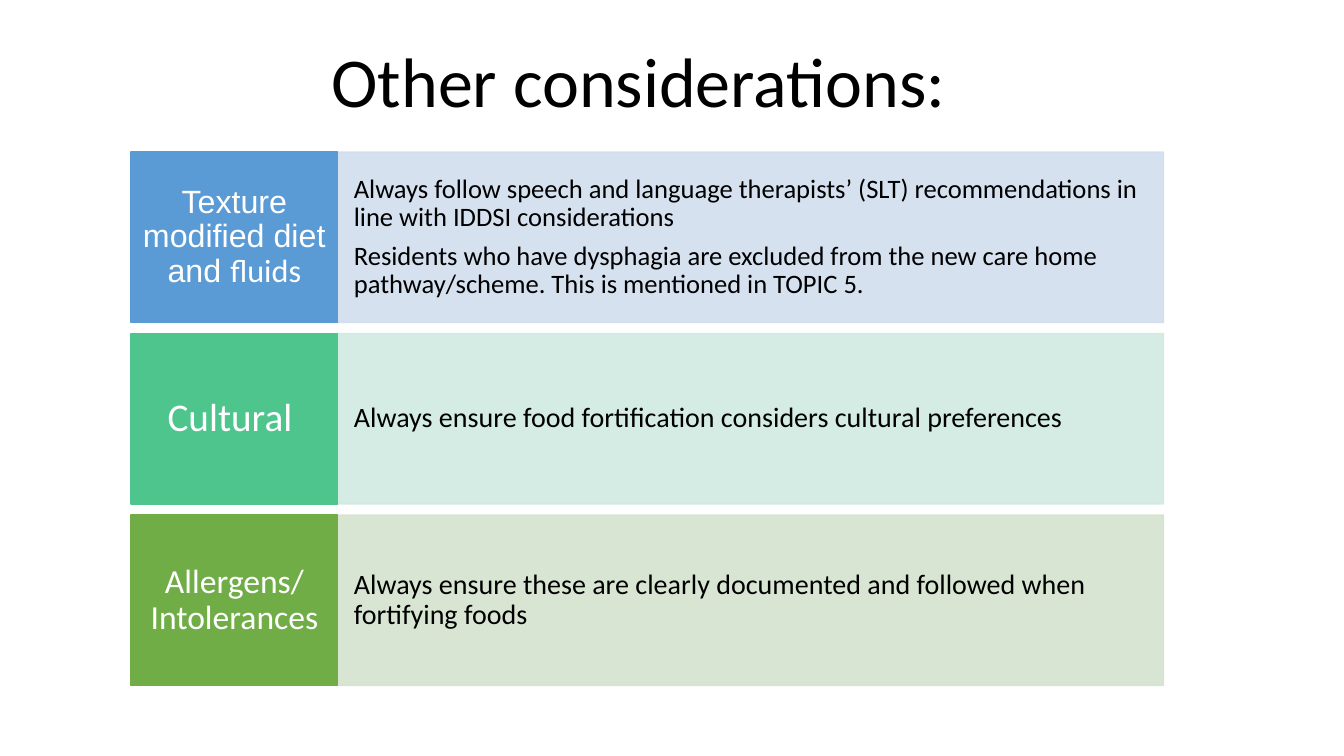
from lxml.etree import SubElement
from pptx import Presentation
from pptx.dml.color import RGBColor
from pptx.enum.shapes import MSO_SHAPE
from pptx.enum.text import MSO_ANCHOR, PP_ALIGN
from pptx.oxml.ns import qn
from pptx.util import Inches, Pt

LEFT, TOP = 1.3, 1.51
LABEL_W, BODY_W = 2.05, 8.19
ROW_H, STEP = 1.69, 1.8

# Label colour, label size, label runs, body colour, body size, body lines
ROWS = [
    ("5B9BD5", 23,
     [("Texture modified diet and ", "Arial"), ("fluids", "Calibri")],
     "D2DEEF", 19,
     ["Always follow speech and language therapists’ (SLT) "
      "recommendations in line with IDDSI considerations",
      "Residents who have dysphagia are excluded from the new care home "
      "pathway/scheme. This is mentioned in TOPIC 5."]),
    ("4DC58D", 28, [("Cultural ", "Calibri")],
     "D0EAE1", 20,
     ["Always ensure food fortification considers cultural preferences"]),
    ("70AD47", 24, [("Allergens/ Intolerances", "Calibri")],
     "D5E3CF", 20,
     ["Always ensure these are clearly documented and followed when "
      "fortifying foods"]),
]


def paint(fill, color, alpha=100):
    fill.solid()
    fill.fore_color.rgb = RGBColor.from_string(color)
    if alpha < 100:
        for tone in fill._xPr.iter(qn("a:srgbClr")):
            SubElement(tone, qn("a:alpha")).set("val", str(alpha * 1000))


def write(frame, paras, size, color, align, after=0):
    """Fill a frame; each paragraph is a list of (text, font) runs."""
    frame.word_wrap = True
    for i, runs in enumerate(paras):
        para = frame.paragraphs[0] if i == 0 else frame.add_paragraph()
        para.alignment = align
        para.line_spacing = 0.9
        para.space_after = Pt(after)
        for text, name in runs:
            run = para.add_run()
            run.text = text
            run.font.name = name
            run.font.size = Pt(size)
            paint(run.font.fill, color)


def add_title(slide, text):
    box = slide.shapes.add_textbox(
        Inches(LEFT), Inches(0.42), Inches(10.23), Inches(1.0))
    write(box.text_frame, [[(text, "Calibri")]], 50, "000000",
          PP_ALIGN.CENTER)


def add_panel(slide, left, top, width, color, alpha, pad):
    panel = slide.shapes.add_shape(
        MSO_SHAPE.RECTANGLE, Inches(left), Inches(top),
        Inches(width), Inches(ROW_H))
    panel.shadow.inherit = False
    paint(panel.fill, color, alpha)
    paint(panel.line.fill, color, alpha)
    panel.line.width = Pt(1)
    frame = panel.text_frame
    frame.vertical_anchor = MSO_ANCHOR.MIDDLE
    frame.margin_left = frame.margin_right = Inches(pad[0])
    frame.margin_top = frame.margin_bottom = Inches(pad[1])
    return frame


def add_row(slide, top, tint, size, label, pale, body_size, lines):
    # Pale description panel
    body = add_panel(slide, LEFT + LABEL_W, top, BODY_W, pale, 90,
                     (0.16, 0.43))
    write(body, [[(line, "Calibri")] for line in lines], body_size,
          "000000", PP_ALIGN.LEFT, body_size * 0.35)
    # Solid label panel
    head = add_panel(slide, LEFT, top, LABEL_W, tint, 100, (0.11, 0.17))
    write(head, [label], size, "FFFFFF", PP_ALIGN.CENTER, size * 0.35)


def main():
    prs = Presentation()
    prs.slide_width, prs.slide_height = Inches(13.33), Inches(7.5)
    slide = prs.slides.add_slide(prs.slide_layouts[6])
    add_title(slide, "Other considerations: ")
    for i, row in enumerate(ROWS):
        add_row(slide, TOP + i * STEP, *row)
    prs.save("out.pptx")


if __name__ == "__main__":
    main()
